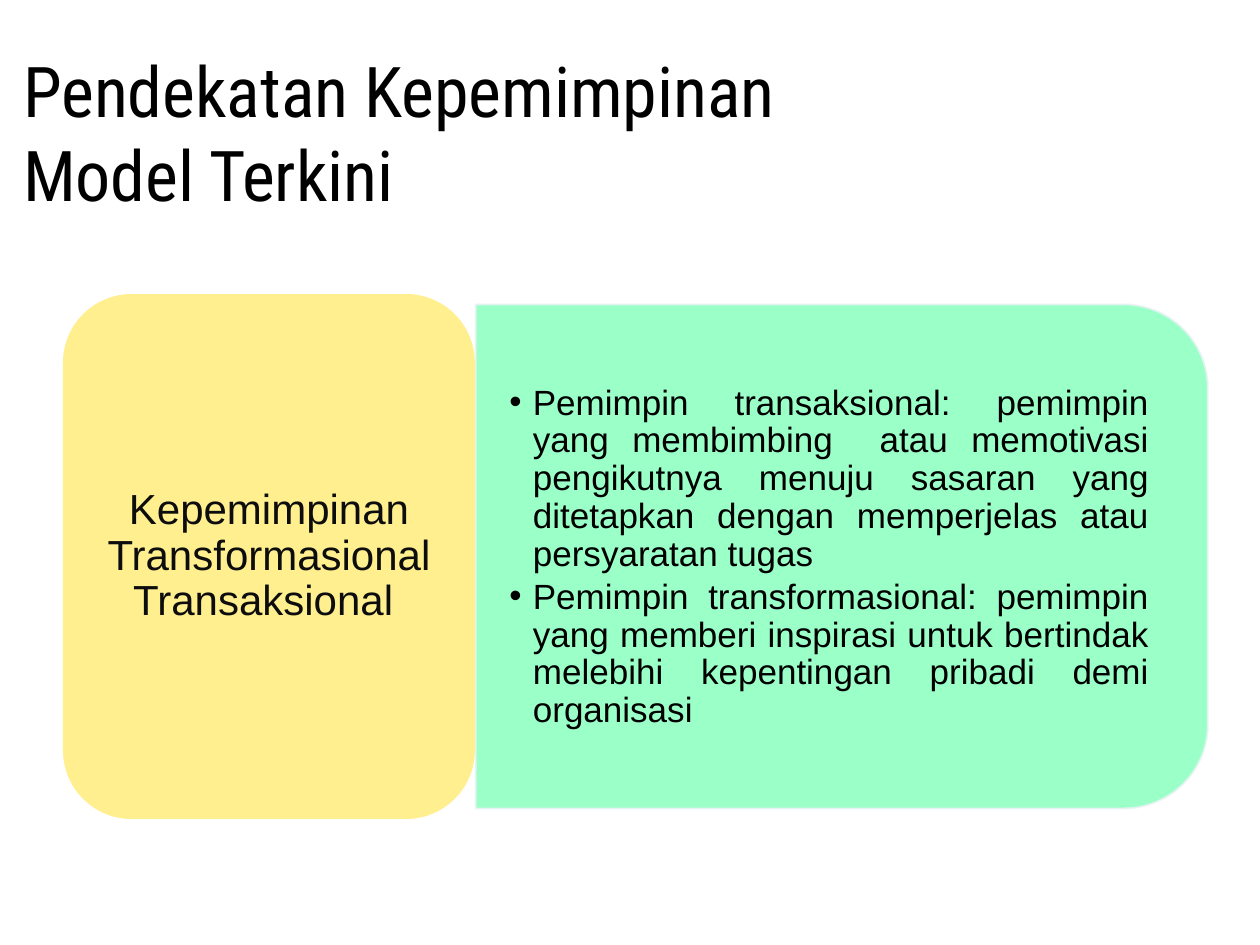
from pptx import Presentation
from pptx.dml.color import RGBColor
from pptx.enum.shapes import MSO_SHAPE
from pptx.enum.text import MSO_ANCHOR, MSO_AUTO_SIZE, PP_ALIGN
from pptx.oxml.ns import qn
from pptx.util import Pt
from lxml.etree import SubElement

TITLE = "Pendekatan Kepemimpinan Model Terkini"
TOPIC = "Kepemimpinan Transformasional Transaksional "
POINTS = [
    "Pemimpin transaksional: pemimpin yang membimbing  atau memotivasi "
    "pengikutnya menuju sasaran yang ditetapkan dengan memperjelas atau "
    "persyaratan tugas",
    "Pemimpin transformasional: pemimpin yang memberi inspirasi untuk "
    "bertindak melebihi kepentingan pribadi demi organisasi",
]


def color(value):
    return RGBColor.from_string(value)


def set_font(paragraph, name, size, font_color):
    paragraph.font.name = name
    paragraph.font.size = Pt(size)
    paragraph.font.color.rgb = color(font_color)


def add_title(slide, text):
    title = slide.shapes.title
    title.left, title.top, title.width, title.height = Pt(6), Pt(36), Pt(498), Pt(78)
    frame = title.text_frame
    frame.text = text
    frame.auto_size = MSO_AUTO_SIZE.NONE
    frame.vertical_anchor = MSO_ANCHOR.MIDDLE
    paragraph = frame.paragraphs[0]
    paragraph.alignment = PP_ALIGN.LEFT
    set_font(paragraph, "Roboto Condensed", 40, "000000")


def add_panel(slide, kind, left, top, width, height, fill):
    shape = slide.shapes.add_shape(kind, Pt(left), Pt(top), Pt(width), Pt(height))
    shape.shadow.inherit = False
    shape.fill.solid()
    shape.fill.fore_color.rgb = color(fill)
    shape.line.fill.background()
    return shape


def outline(shape, line_color, width, opacity):
    shape.line.color.rgb = color(line_color)
    shape.line.width = Pt(width)
    line_fill = shape.line._get_or_add_ln().find(qn("a:solidFill"))
    SubElement(line_fill[0], qn("a:alpha"), val=str(opacity * 1000))


def add_bullet(paragraph, indent):
    properties = paragraph._p.get_or_add_pPr()
    properties.set("marL", str(Pt(indent)))
    properties.set("indent", str(-Pt(indent)))
    SubElement(properties, qn("a:buFont"), typeface="Arial")
    SubElement(properties, qn("a:buChar"), char="•")


def add_text(slide, left, top, width, height, texts, margins, size, font_color,
             alignment, space_after, bullet_indent=None):
    box = slide.shapes.add_textbox(Pt(left), Pt(top), Pt(width), Pt(height))
    frame = box.text_frame
    frame.word_wrap = True
    frame.vertical_anchor = MSO_ANCHOR.MIDDLE
    frame.margin_left = frame.margin_right = Pt(margins[0])
    frame.margin_top = frame.margin_bottom = Pt(margins[1])
    frame.text = "\n".join(texts)
    for paragraph in frame.paragraphs:
        paragraph.alignment = alignment
        paragraph.line_spacing = 0.9
        paragraph.space_after = Pt(space_after)
        if bullet_indent:
            add_bullet(paragraph, bullet_indent)
        set_font(paragraph, "Arial", size, font_color)


def main():
    presentation = Presentation()
    presentation.slide_width, presentation.slide_height = Pt(720), Pt(540)
    slide = presentation.slides.add_slide(presentation.slide_layouts[5])
    add_title(slide, TITLE)

    # Explanation panel, turned so that its round corners face right
    explanation = add_panel(slide, MSO_SHAPE.ROUND_2_SAME_RECTANGLE,
                            337, 108.8, 288, 418.4, "9BFFC8")
    explanation.rotation = 90
    outline(explanation, "E7F3F4", 1, 90)
    add_text(slide, 271.5, 188.6, 404.6, 260, POINTS, (19.5, 10), 20, "000000",
             PP_ALIGN.JUSTIFY, 3, bullet_indent=13.5)

    # Topic panel
    add_panel(slide, MSO_SHAPE.ROUNDED_RECTANGLE, 36, 168, 235.4, 300, "FFEF8F")
    add_text(slide, 47.5, 179.5, 212.4, 277, [TOPIC], (6, 3), 24, "0D0D0D",
             PP_ALIGN.CENTER, 8.4)

    presentation.save("out.pptx")


if __name__ == "__main__":
    main()
